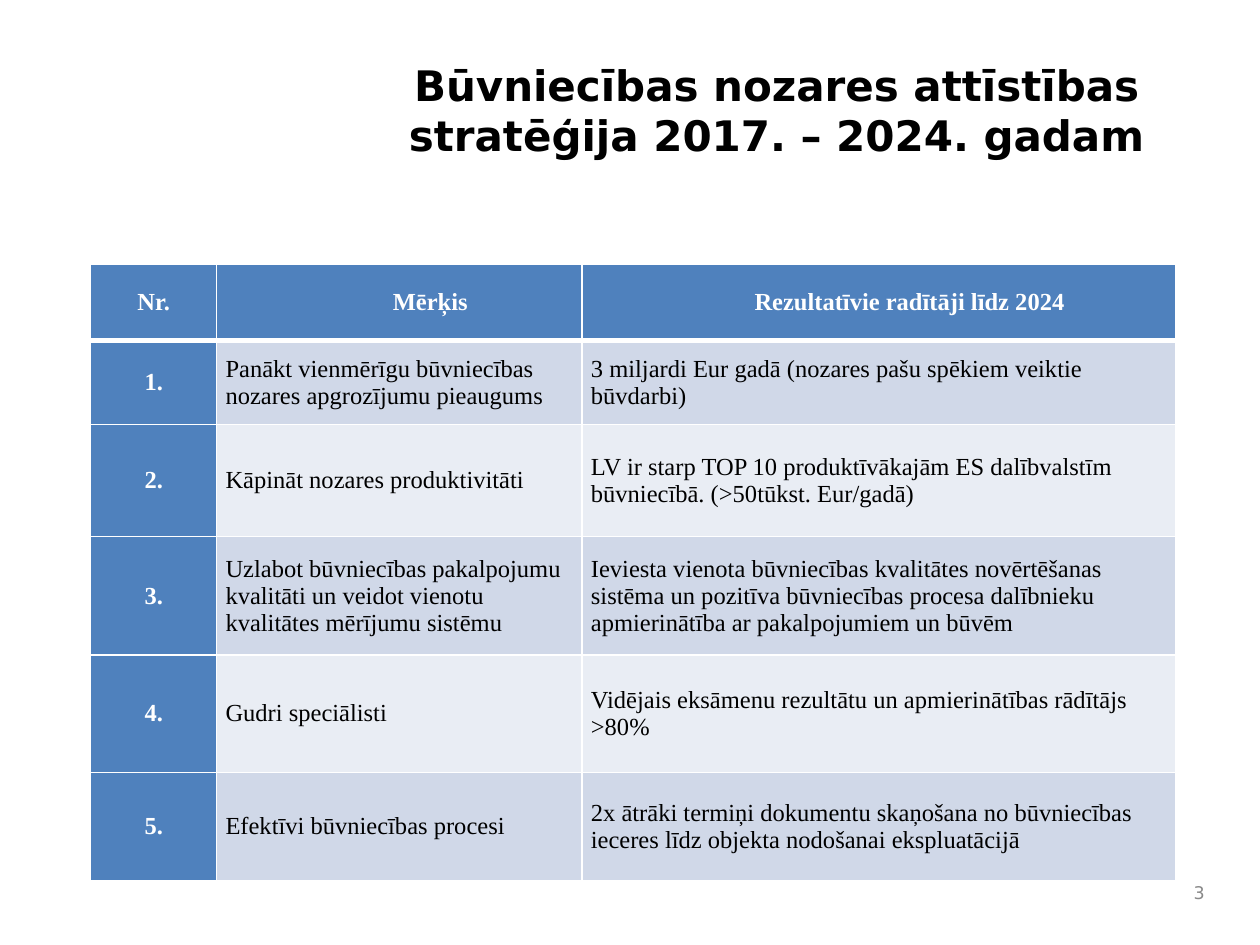
from pptx import Presentation, util as u
from pptx.dml.color import RGBColor
from pptx.enum import text
from pptx.oxml import parse_xml
from pptx.oxml.ns import nsdecls

COLORS = {"ink": "000000", "paper": "FFFFFF", "blue": "4F81BD",
          "odd": "D0D8E8", "even": "E9EDF4", "grey": "898989"}
COLUMNS = [1, 2.9, 4.71]
ROWS = [0.6, 0.67, 0.89, 0.94, 0.93, 0.86]
HEADERS = ["Nr.", "Mērķis", "Rezultatīvie radītāji līdz 2024"]
GOALS = [
    ("Panākt vienmērīgu būvniecības nozares apgrozījumu pieaugums",
     "3 miljardi Eur gadā (nozares pašu spēkiem veiktie būvdarbi)"),
    ("Kāpināt nozares produktivitāti",
     "LV ir starp TOP 10 produktīvākajām ES dalībvalstīm būvniecībā. (>50tūkst. Eur/gadā)"),
    ("Uzlabot būvniecības pakalpojumu kvalitāti un veidot vienotu kvalitātes mērījumu sistēmu",
     "Ieviesta vienota būvniecības kvalitātes novērtēšanas sistēma un pozitīva būvniecības "
     "procesa dalībnieku apmierinātība ar pakalpojumiem un būvēm"),
    ("Gudri speciālisti",
     "Vidējais eksāmenu rezultātu un apmierinātības rādītājs >80%"),
    ("Efektīvi būvniecības procesi",
     "2x ātrāki termiņi dokumentu skaņošana no būvniecības ieceres līdz objekta nodošanai "
     "ekspluatācijā"),
]


def write(frame, words, size, color, align, bold=False, font="DejaVu Sans"):
    """Fill a text frame with one formatted paragraph."""
    frame.text = words
    para = frame.paragraphs[0]
    para.alignment = align
    span = para.runs[0].font
    span.name, span.size, span.bold = font, u.Pt(size), bold
    span.color.rgb = RGBColor.from_string(COLORS[color])
    return para


def add_label(page, box, words, size, color, align, anchor, bold=False):
    """Place a wrapped text box."""
    frame = page.shapes.add_textbox(*map(u.Inches, box)).text_frame
    frame.word_wrap = True
    frame.vertical_anchor = anchor
    write(frame, words, size, color, align, bold)


def add_borders(cell, bottom):
    """Draw white borders around a cell, with the given bottom width in points."""
    properties = cell._tc.get_or_add_tcPr()
    for place, (side, width) in enumerate(zip("LRTB", (1, 1, 1, bottom))):
        properties.insert(place, parse_xml(
            f'<a:ln{side} {nsdecls("a")} w="{u.Pt(width)}"><a:solidFill>'
            f'<a:srgbClr val="{COLORS["paper"]}"/></a:solidFill></a:ln{side}>'))


def style_cell(cell, row, column, words):
    """Format one cell according to its place in the table."""
    heading = row == 0 or column == 0
    fill = "blue" if heading else "odd" if row % 2 else "even"
    cell.margin_left = cell.margin_right = u.Inches(0.07)
    cell.margin_top = cell.margin_bottom = 0
    cell.vertical_anchor = text.MSO_ANCHOR.MIDDLE
    cell.fill.solid()
    cell.fill.fore_color.rgb = RGBColor.from_string(COLORS[fill])
    add_borders(cell, 1 if row else 3)
    align = text.PP_ALIGN.CENTER if heading else text.PP_ALIGN.LEFT
    para = write(cell.text_frame, words, 14, "paper" if heading else "ink",
                 align, heading, "Times New Roman")
    if row == 0 and column:
        para._p.get_or_add_pPr().set("indent", str(u.Inches(0.49)))


def add_goals(page, left, top):
    """Place the table of goals and their indicators."""
    records = [HEADERS] + [(f"{number}.", *goal) for number, goal in enumerate(GOALS, 1)]
    table = page.shapes.add_table(
        len(ROWS), len(COLUMNS), u.Inches(left), u.Inches(top),
        u.Inches(sum(COLUMNS)), u.Inches(sum(ROWS))).table
    for column, width in zip(table.columns, COLUMNS):
        column.width = u.Inches(width)
    for row, (height, record) in enumerate(zip(ROWS, records)):
        table.rows[row].height = u.Inches(height)
        for column, words in enumerate(record):
            style_cell(table.cell(row, column), row, column, words)


def main():
    """Build the strategy slide and save it."""
    deck = Presentation()
    deck.slide_width, deck.slide_height = u.Inches(10), u.Inches(7.5)
    page = deck.slides.add_slide(deck.slide_layouts[6])
    add_label(page, (2.83, 0.42, 6.67, 1.13),
              "Būvniecības nozares attīstības stratēģija 2017. – 2024. gadam",
              24, "ink", text.PP_ALIGN.CENTER, text.MSO_ANCHOR.TOP, True)
    add_goals(page, 0.72, 2.1)
    add_label(page, (9.33, 6.92, 0.33, 0.33), "3", 10, "grey",
              text.PP_ALIGN.RIGHT, text.MSO_ANCHOR.MIDDLE)
    deck.save("out.pptx")


if __name__ == "__main__":
    main()
